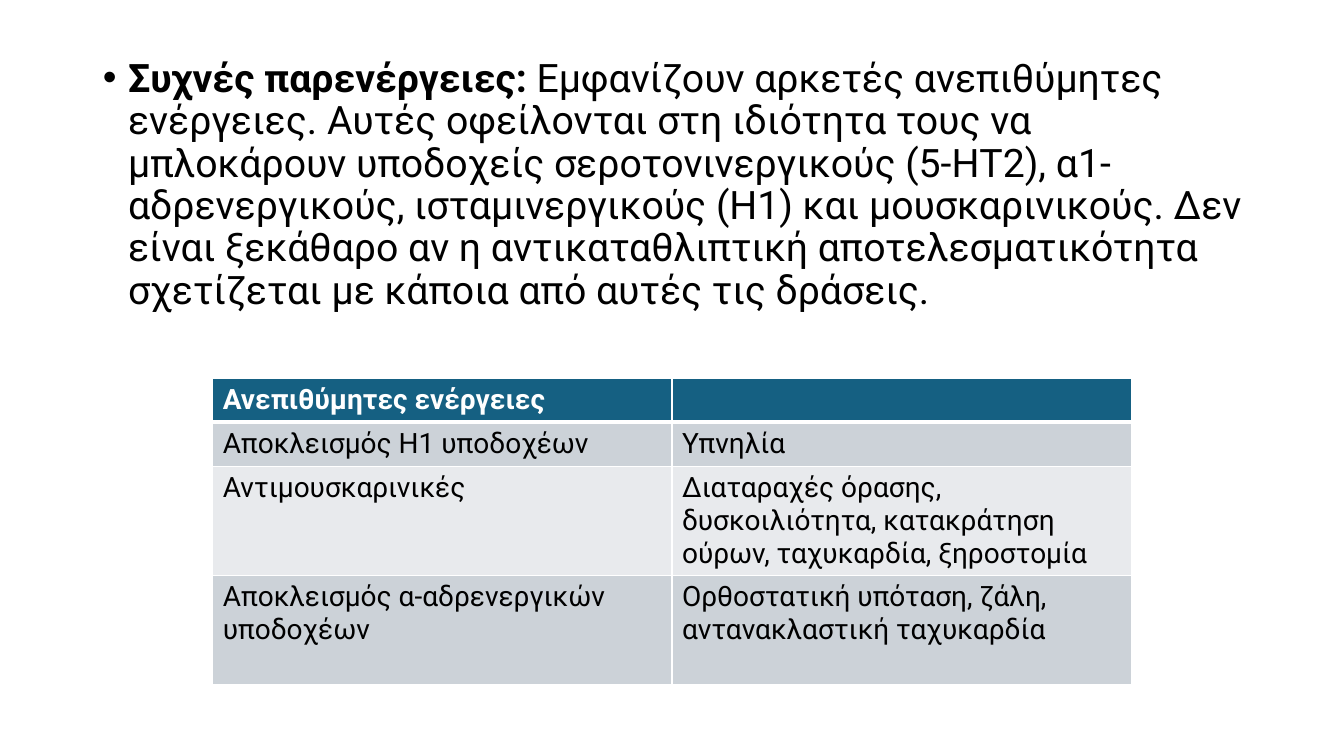
from dataclasses import dataclass

from lxml import etree
from pptx import Presentation
from pptx.dml.color import RGBColor
from pptx.enum import text
from pptx.oxml import ns
from pptx.util import Inches, Pt


@dataclass(frozen=True)
class Theme:
    font: str = "Roboto"
    ink: str = "000000"
    white: str = "FFFFFF"
    header: str = "156082"
    bands: tuple[str, str] = ("CCD2D8", "E8EAED")
    body_size: int = 28
    table_size: int = 20
    rule: int = 1
    header_rule: int = 3


@dataclass(frozen=True)
class EffectRow:
    cause: str
    effects: str
    height: float


THEME = Theme()

EFFECT_ROWS = [
    EffectRow("Ανεπιθύμητες ενέργειες", "", 0.44),
    EffectRow("Αποκλεισμός Η1 υποδοχέων", "Υπνηλία", 0.44),
    EffectRow(
        "Αντιμουσκαρινικές",
        "Διαταραχές όρασης, δυσκοιλιότητα, κατακράτηση ούρων, ταχυκαρδία, ξηροστομία",
        1.08,
    ),
    EffectRow(
        "Αποκλεισμός α-αδρενεργικών υποδοχέων",
        "Ορθοστατική υπόταση, ζάλη, αντανακλαστική ταχυκαρδία",
        1.08,
    ),
]

LEAD = "Συχνές παρενέργειες: "
EXPLANATION = (
    "Εμφανίζουν αρκετές ανεπιθύμητες ενέργειες. Αυτές οφείλονται στη ιδιότητα "
    "τους να μπλοκάρουν υποδοχείς σεροτονινεργικούς (5-ΗΤ2), α1- αδρενεργικούς, "
    "ισταμινεργικούς (Η1) και μουσκαρινικούς. Δεν είναι ξεκάθαρο αν η "
    "αντικαταθλιπτική αποτελεσματικότητα σχετίζεται με κάποια από αυτές τις δράσεις."
)


def add_run(paragraph, words: str, size: int, color: str, bold: bool = False) -> None:
    run = paragraph.add_run()
    run.text = words
    run.font.name = THEME.font
    run.font.size = Pt(size)
    run.font.bold = bold
    run.font.color.rgb = RGBColor.from_string(color)


def set_bullet(paragraph, indent: float) -> None:
    properties = paragraph._p.get_or_add_pPr()
    properties.set("marL", str(Inches(indent)))
    properties.set("indent", str(-Inches(indent)))
    etree.SubElement(properties, ns.qn("a:buFont"), typeface="Arial")
    etree.SubElement(properties, ns.qn("a:buChar"), char="•")


def set_borders(cell, top: int, bottom: int) -> None:
    properties = cell._tc.get_or_add_tcPr()
    widths = {"lnL": THEME.rule, "lnR": THEME.rule, "lnT": top, "lnB": bottom}
    for side, width in widths.items():
        line = etree.SubElement(properties, ns.qn(f"a:{side}"), w=str(Pt(width)))
        fill = etree.SubElement(line, ns.qn("a:solidFill"))
        etree.SubElement(fill, ns.qn("a:srgbClr"), val=THEME.white)


def fill_body(body) -> None:
    body.left, body.top = Inches(0.92), Inches(0.53)
    body.width, body.height = Inches(11.5), Inches(3.98)
    frame = body.text_frame
    frame.word_wrap = True
    frame.auto_size = text.MSO_AUTO_SIZE.NONE
    summary = frame.paragraphs[0]
    summary.line_spacing = 0.9
    summary.space_before = Pt(10)
    set_bullet(summary, 0.25)
    add_run(summary, LEAD, THEME.body_size, THEME.ink, bold=True)
    add_run(summary, EXPLANATION, THEME.body_size, THEME.ink)


def add_effects_table(slide, rows: list[EffectRow]) -> None:
    height = sum(row.height for row in rows)
    effects = slide.shapes.add_table(
        len(rows), 2, Inches(2.11), Inches(3.75), Inches(9.11), Inches(height)
    ).table
    for index, row in enumerate(rows):
        effects.rows[index].height = Inches(row.height)
        is_header = index == 0
        background = THEME.header if is_header else THEME.bands[(index - 1) % 2]
        color = THEME.white if is_header else THEME.ink
        top = THEME.header_rule if index == 1 else THEME.rule
        bottom = THEME.header_rule if is_header else THEME.rule
        for column, words in enumerate((row.cause, row.effects)):
            cell = effects.cell(index, column)
            set_borders(cell, top, bottom)
            cell.fill.solid()
            cell.fill.fore_color.rgb = RGBColor.from_string(background)
            if words:
                paragraph = cell.text_frame.paragraphs[0]
                add_run(paragraph, words, THEME.table_size, color, is_header)


def main() -> None:
    deck = Presentation()
    deck.slide_width, deck.slide_height = Inches(13.33), Inches(7.5)
    slide = deck.slides.add_slide(deck.slide_layouts[1])

    # The slide has no heading
    heading = slide.shapes.title.element
    heading.getparent().remove(heading)

    # Explanation above, side effects by mechanism below
    fill_body(slide.placeholders[1])
    add_effects_table(slide, EFFECT_ROWS)

    deck.save("out.pptx")


if __name__ == "__main__":
    main()
